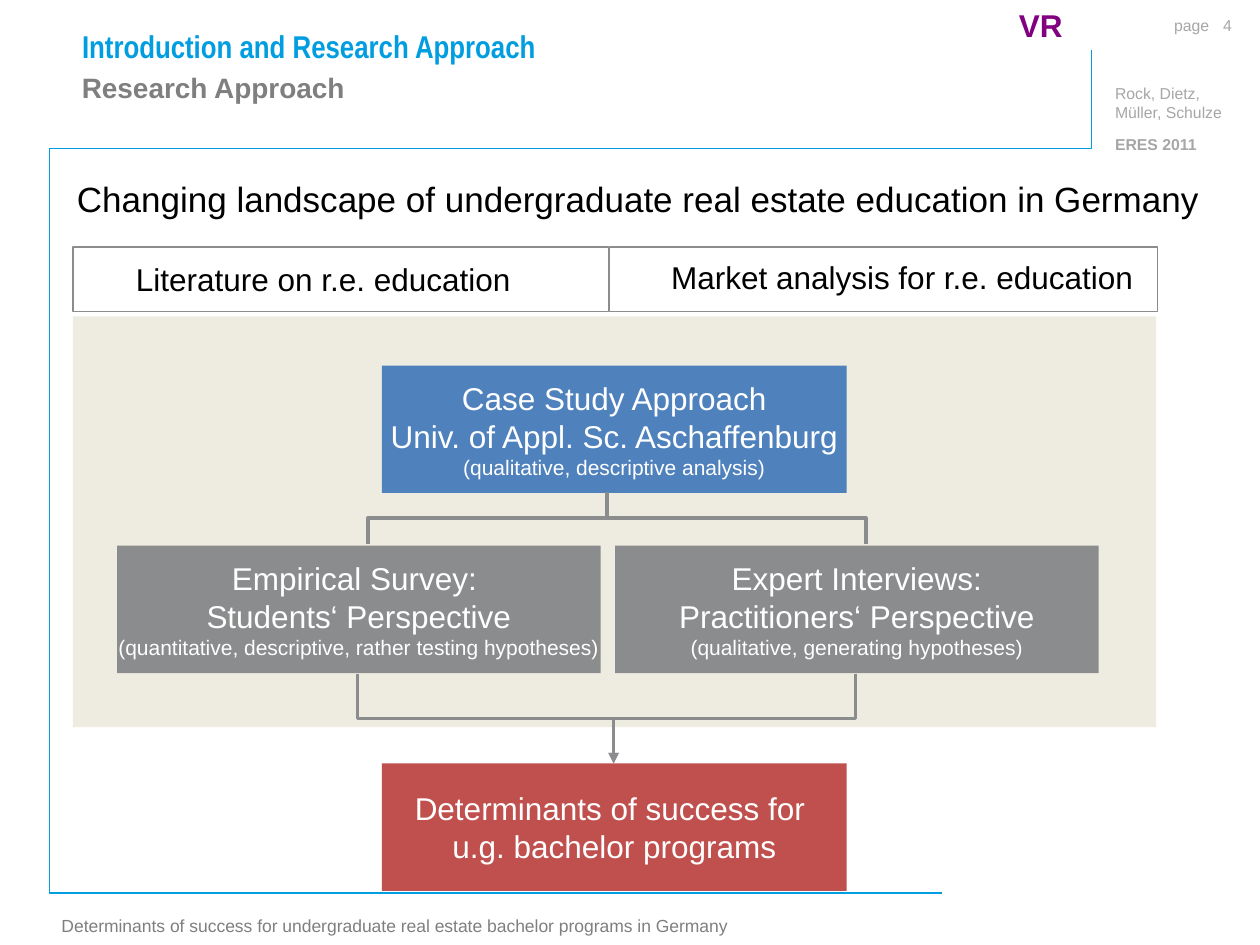
"""Build the research approach slide with its flow from case study to success factors."""
from lxml import etree
from pptx import Presentation
from pptx import util as u
from pptx.dml.color import RGBColor
from pptx.enum import shapes, text
from pptx.oxml import ns

BLUE = RGBColor(0x00, 0x9E, 0xE0)
LIGHT = RGBColor(0xA6, 0xA6, 0xA6)
MEDIUM = RGBColor(0x7F, 0x7F, 0x7F)
LINE_GREY = RGBColor(0x8B, 0x8C, 0x8E)
BEIGE = RGBColor(0xEE, 0xEC, 0xE1)
STEEL = RGBColor(0x4F, 0x81, 0xBD)
RED = RGBColor(0xC0, 0x50, 0x4D)
PURPLE = RGBColor(0x80, 0x00, 0x80)
BLACK = RGBColor(0, 0, 0)
WHITE = RGBColor(0xFF, 0xFF, 0xFF)

TITLE = "Introduction and Research Approach"
TITLE_PLACE = (1.4, 0.41, 20.83, 0.81)
FRAME = [(18.97, 18.26), (1.19, 18.26), (1.17, 3.3), (22.23, 3.3), (22.23, 0.99)]
PANEL = (1.47, 6.38, 21.84, 8.28)
SOURCE_BOXES = [(1.47, 4.98, 10.8, 1.3), (12.29, 4.98, 11.05, 1.3)]

LABELS = [
    ("page", (23.42, 0.2, 1.57, 0.79), dict(size=9, color=LIGHT)),
    ("4", (24.41, 0.2, 0.99, 0.79), dict(size=9, color=LIGHT)),
    ("Rock, Dietz, Müller, Schulze", (22.23, 1.57, 3.18, 0.79), dict(size=9, color=LIGHT)),
    ("ERES 2011", (22.23, 2.59, 2.54, 0.79), dict(size=9, color=LIGHT, bold=True)),
    ("Determinants of success for undergraduate real estate bachelor programs in Germany",
     (0.99, 18.26, 14.55, 0.79), dict(size=10, color=MEDIUM, anchor=text.MSO_ANCHOR.MIDDLE)),
    ("Research Approach", (1.4, 1.3, 20.83, 1.78), dict(size=16, color=MEDIUM, bold=True)),
    ("Changing landscape of undergraduate real estate education in Germany",
     (1.3, 3.45, 23.62, 4.88), dict(size=20)),
    ("Literature on r.e. education", (2.49, 5.11, 8.1, 1.02), dict(wrap=False)),
    ("Market analysis for r.e. education", (13.28, 5.08, 9.86, 1.02), dict(wrap=False)),
    ("VR", (20.29, 0, 1.4, 1.02), dict(color=PURPLE, bold=True, wrap=False)),
]

STEP_HEIGHT = 2.57
STEPS = [
    (7.7, 7.37, 9.37, STEEL, ["Case Study Approach", "Univ. of Appl. Sc. Aschaffenburg",
                              "(qualitative, descriptive analysis)"]),
    (2.36, 11, 9.75, LINE_GREY, ["Empirical Survey: ", "Students‘ Perspective",
                                 "(quantitative, descriptive, rather testing hypotheses)"]),
    (12.4, 11, 9.75, LINE_GREY, ["Expert Interviews:", "Practitioners‘ Perspective",
                                 "(qualitative, generating hypotheses)"]),
    (7.7, 15.39, 9.37, RED, ["Determinants of success for \vu.g. bachelor programs"]),
]

ELBOWS = [
    ((12.24, 9.91), (7.42, 10.97), 2.25, False),
    ((12.24, 9.91), (17.45, 10.97), 2.25, False),
    ((7.21, 13.59), (12.37, 15.39), 1.5, True),
    ((17.25, 13.59), (12.37, 15.39), 1.5, True),
]


def write(box, lines, sizes=(), size=18, color=BLACK, bold=False, font="Arial", wrap=True,
          anchor=text.MSO_ANCHOR.TOP, align=text.PP_ALIGN.LEFT):
    """Fill a shape with one paragraph per line."""
    frame = box.text_frame
    frame.auto_size = text.MSO_AUTO_SIZE.NONE
    frame.word_wrap = wrap
    frame.vertical_anchor = anchor
    for index, line in enumerate(lines):
        para = frame.paragraphs[0] if index == 0 else frame.add_paragraph()
        para.text = line
        para.alignment = align
        para.space_before = u.Pt(0)
        for span in para.runs:
            span.font.size = u.Pt(sizes[index] if sizes else size)
            span.font.name = font
            span.font.bold = bold
            span.font.color.rgb = color


def add_box(page, place, fill=None, line=None):
    """Add a flat rectangle."""
    box = page.shapes.add_shape(shapes.MSO_SHAPE.RECTANGLE, *map(u.Cm, place))
    paint(box, fill, line)
    return box


def paint(shape, fill=None, line=None):
    """Set the fill and outline of a shape, without a shadow."""
    shape.shadow.inherit = False
    if fill is None:
        shape.fill.background()
    else:
        shape.fill.solid()
        shape.fill.fore_color.rgb = fill
    if line is None:
        shape.line.fill.background()
    else:
        shape.line.color.rgb = line
        shape.line.width = u.Pt(0.75)


def add_elbow(page, start, end, width, arrow):
    """Add a connector that goes down, across and down again."""
    across, down = abs(end[0] - start[0]), end[1] - start[1]
    left = (start[0] + end[0] - down) / 2
    top = (start[1] + end[1] - across) / 2
    corners = (left, top, left + down, top + across)
    connector = page.shapes.add_connector(shapes.MSO_CONNECTOR.ELBOW, *map(u.Cm, corners))
    connector.line.color.rgb = LINE_GREY
    connector.line.width = u.Pt(width)
    properties = connector._element.spPr
    placement = properties.find(ns.qn("a:xfrm"))
    if end[0] > start[0]:
        placement.set("rot", str(270 * 60000))
        placement.set("flipH", "1")
    else:
        placement.set("rot", str(90 * 60000))
    if arrow:
        outline = properties.find(ns.qn("a:ln"))
        etree.SubElement(outline, ns.qn("a:tailEnd"), type="triangle")
    etree.SubElement(properties, ns.qn("a:effectLst"))


def main():
    """Build and save the deck."""
    deck = Presentation()
    deck.slide_width, deck.slide_height = u.Cm(25.4), u.Cm(19.05)
    page = deck.slides.add_slide(deck.slide_layouts[5])

    title = page.shapes.title
    title.left, title.top, title.width, title.height = map(u.Cm, TITLE_PLACE)
    write(title, [TITLE], color=BLUE, bold=True, font="Arial Narrow")

    builder = page.shapes.build_freeform(*FRAME[0], scale=u.Cm(1))
    builder.add_line_segments(FRAME[1:], close=False)
    paint(builder.convert_to_shape(), line=BLUE)

    add_box(page, PANEL, fill=BEIGE)
    for left, top, width, fill, lines in STEPS:
        box = add_box(page, (left, top, width, STEP_HEIGHT), fill=fill)
        write(box, lines, sizes=(18, 18, 12), color=WHITE, wrap=False,
              anchor=text.MSO_ANCHOR.MIDDLE, align=text.PP_ALIGN.CENTER)
    for elbow in ELBOWS:
        add_elbow(page, *elbow)
    for place in SOURCE_BOXES:
        add_box(page, place, line=LINE_GREY)
    for words, place, style in LABELS:
        write(page.shapes.add_textbox(*map(u.Cm, place)), [words], **style)

    deck.save("out.pptx")


if __name__ == "__main__":
    main()
